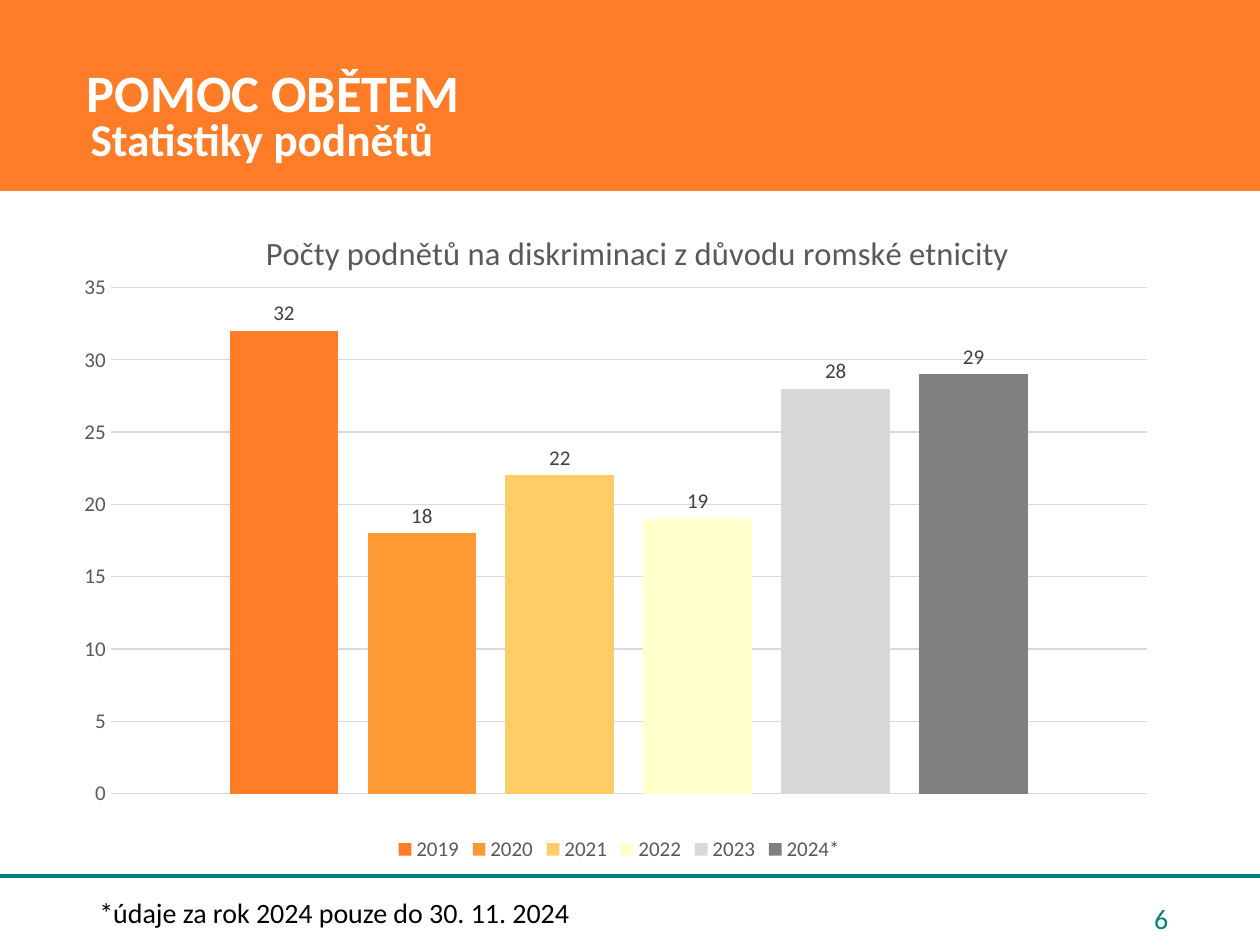
from lxml import etree
from pptx import Presentation
from pptx.chart.data import CategoryChartData
from pptx.dml.color import RGBColor
from pptx.enum.chart import XL_CHART_TYPE, XL_LABEL_POSITION, XL_LEGEND_POSITION, XL_TICK_MARK
from pptx.enum.shapes import MSO_CONNECTOR, MSO_SHAPE
from pptx.enum.text import MSO_ANCHOR, PP_ALIGN
from pptx.oxml.ns import qn
from pptx.util import Inches, Pt

COLUMNS = XL_CHART_TYPE.COLUMN_CLUSTERED
OUTSIDE = XL_LABEL_POSITION.OUTSIDE_END
BOTTOM = XL_LEGEND_POSITION.BOTTOM
NO_TICK = XL_TICK_MARK.NONE
STRAIGHT = MSO_CONNECTOR.STRAIGHT
RECT = MSO_SHAPE.RECTANGLE
TOP, MIDDLE = MSO_ANCHOR.TOP, MSO_ANCHOR.MIDDLE
LEFT, RIGHT = PP_ALIGN.LEFT, PP_ALIGN.RIGHT

FONT = "Calibri"
ORANGE = RGBColor(0xFF, 0x7D, 0x28)
TEAL = RGBColor(0x00, 0x82, 0x76)
WHITE = RGBColor(0xFF, 0xFF, 0xFF)
BLACK = RGBColor(0x00, 0x00, 0x00)
GREY = RGBColor(0x59, 0x59, 0x59)
LABEL_GREY = RGBColor(0x40, 0x40, 0x40)
GRID_GREY = RGBColor(0xD9, 0xD9, 0xD9)

COMPLAINTS = [
    ("2019", 32, ORANGE),
    ("2020", 18, RGBColor(0xFF, 0x99, 0x33)),
    ("2021", 22, RGBColor(0xFF, 0xCC, 0x66)),
    ("2022", 19, RGBColor(0xFF, 0xFF, 0xCC)),
    ("2023", 28, RGBColor(0xD8, 0xD8, 0xD8)),
    ("2024*", 29, RGBColor(0x7F, 0x7F, 0x7F)),
]


def style_font(font, size, color, bold=False):
    font.name, font.size, font.bold = FONT, Pt(size), bold
    font.color.rgb = color


def write_text(tf, text, *, size, color, bold=False, align=LEFT, spacing=1.0):
    p = tf.paragraphs[0]
    p.alignment, p.line_spacing = align, spacing
    r = p.add_run()
    r.text = text
    style_font(r.font, size, color, bold)


def set_layout(parent, **places):
    """Place a chart part by fractions of the chart area."""
    layout = parent.find(qn("c:layout"))
    if layout is None:
        layout = etree.Element(qn("c:layout"))
        tx = parent.find(qn("c:tx"))
        if tx is None:
            parent.insert(0, layout)
        else:
            tx.addnext(layout)
    manual = etree.SubElement(layout, qn("c:manualLayout"))
    for tag, value in places.items():
        etree.SubElement(manual, qn(f"c:{tag}")).set("val", str(value))


class SlideBuilder:
    def __init__(self, slide):
        self.slide = slide
        self.shapes = slide.shapes

    def rule(self, x1, y1, x2, y2, color, width):
        line = self.shapes.add_connector(
            STRAIGHT, Inches(x1), Inches(y1), Inches(x2), Inches(y2))
        line.line.color.rgb, line.line.width = color, Pt(width)
        etree.SubElement(line._element.spPr, qn("a:effectLst"))

    def band(self, x, y, w, h, color):
        sp = self.shapes.add_shape(RECT, Inches(x), Inches(y), Inches(w), Inches(h))
        sp.shadow.inherit = False
        sp.fill.solid()
        sp.fill.fore_color.rgb = sp.line.color.rgb = color
        sp.line.width = Pt(1)

    def text(self, x, y, w, h, text, *, anchor=TOP, inset=0.1, **style):
        tf = self.shapes.add_textbox(
            Inches(x), Inches(y), Inches(w), Inches(h)).text_frame
        tf.word_wrap, tf.vertical_anchor = True, anchor
        tf.margin_left = Inches(inset)
        write_text(tf, text, **style)

    def column_chart(self, x, y, w, h, title, rows):
        data = CategoryChartData()
        data.categories = ["1"]
        for name, value, _ in rows:
            data.add_series(name, [value])
        chart = self.shapes.add_chart(
            COLUMNS, Inches(x), Inches(y), Inches(w), Inches(h), data).chart
        style_font(chart.font, 10, BLACK)

        # Title and legend
        chart.has_title = True
        write_text(chart.chart_title.text_frame, title, size=18.6, color=GREY)
        chart.chart_title.include_in_layout = False
        set_layout(chart.chart_title._element, xMode="edge", yMode="edge", x=0.18, y=0.07)
        chart.has_legend = True
        chart.legend.position = BOTTOM
        chart.legend.include_in_layout = False
        style_font(chart.legend.font, 12, GREY)

        # Axes
        chart.category_axis.visible = False
        axis = chart.value_axis
        axis.minimum_scale, axis.maximum_scale, axis.major_unit = 0, 35, 5
        axis.major_tick_mark = axis.minor_tick_mark = NO_TICK
        axis.format.line.fill.background()
        grid = axis.major_gridlines.format.line
        grid.color.rgb, grid.width = GRID_GREY, Pt(0.75)
        style_font(axis.tick_labels.font, 12, GREY)

        # Columns
        plot = chart.plots[0]
        plot.gap_width, plot.overlap, plot.vary_by_categories = 219, -27, False
        set_layout(chart._chartSpace.chart.plotArea, layoutTarget="inner",
                   xMode="edge", yMode="edge", x=0.047, y=0.161, w=0.923, h=0.733)
        for series, (_, _, color) in zip(plot.series, rows):
            series.format.fill.solid()
            series.format.fill.fore_color.rgb = color
            labels = series.data_labels
            labels.show_value, labels.position = True, OUTSIDE
            style_font(labels.font, 12, LABEL_GREY)


def main():
    prs = Presentation()
    prs.slide_width, prs.slide_height = Inches(10), Inches(7.5)
    s = SlideBuilder(prs.slides.add_slide(prs.slide_layouts[6]))

    # Frame
    s.rule(-0.03, 6.95, 10.04, 6.95, TEAL, 2.25)
    s.band(0, 0, 10.04, 1.51, ORANGE)

    # Heading
    s.text(0, 0, 10, 1.51, "POMOC OBĚTEM", anchor=MIDDLE, inset=0.69,
           size=30, color=WHITE, bold=True, spacing=0.9)
    s.text(0.62, 0.95, 5.99, 0.44, "Statistiky podnětů",
           size=25.9, color=WHITE, bold=True, spacing=0.7)

    # Chart
    s.column_chart(0.46, 1.4, 8.91, 5.48,
                   "Počty podnětů na diskriminaci z důvodu romské etnicity", COMPLAINTS)

    # Footer
    s.text(0.69, 7.09, 7.88, 0.4, "*údaje za rok 2024 pouze do 30. 11. 2024",
           size=16, color=BLACK, spacing=0.9)
    s.text(7.08, 7.09, 2.29, 0.4, "6", anchor=MIDDLE,
           size=16, color=TEAL, align=RIGHT)

    prs.save("out.pptx")


if __name__ == "__main__":
    main()
